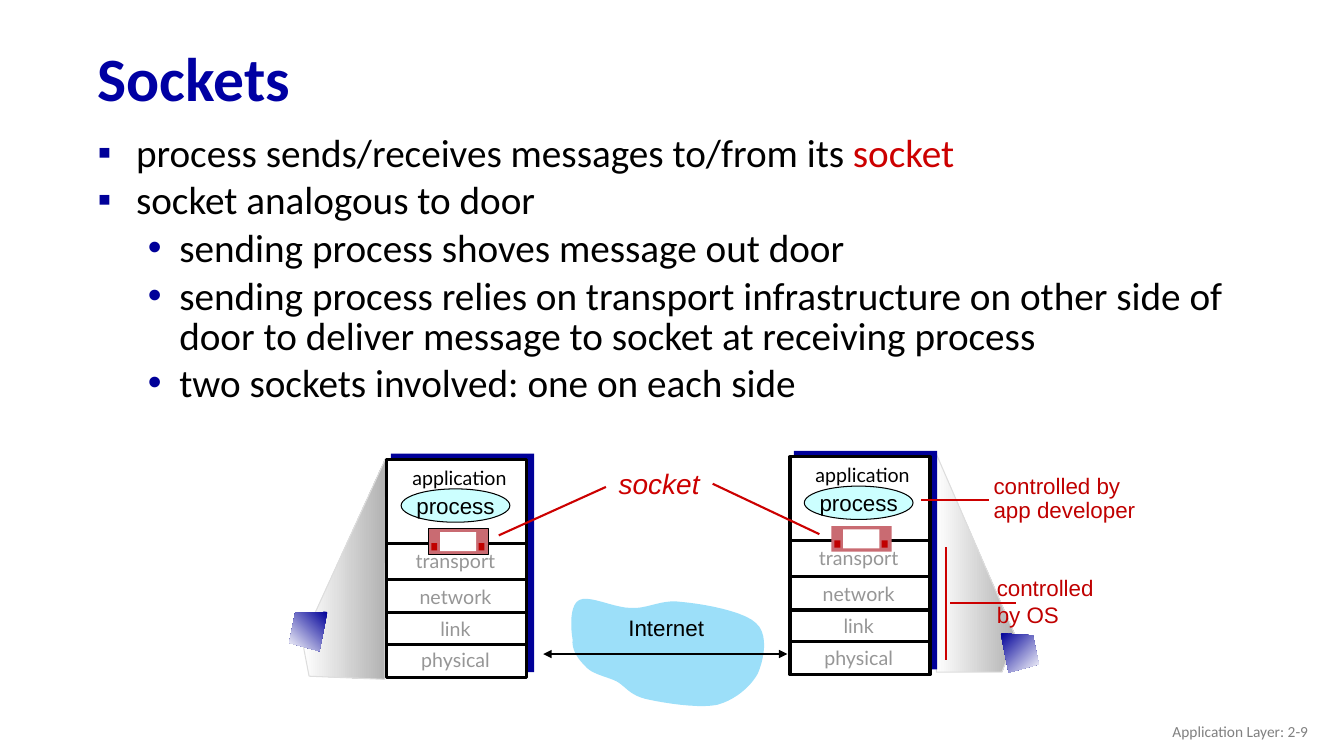
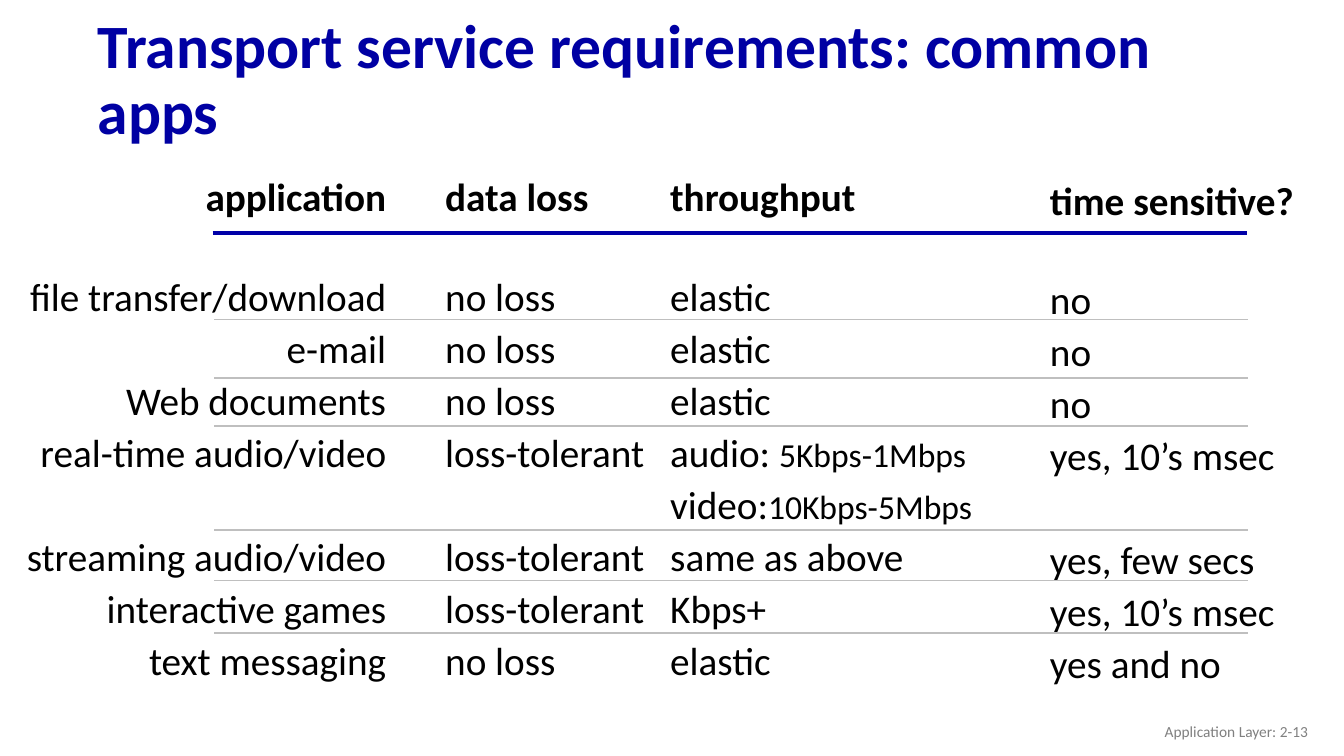
from dataclasses import dataclass

from lxml.etree import SubElement
from pptx import Presentation
from pptx.dml.color import RGBColor
from pptx.enum.shapes import MSO_CONNECTOR, MSO_SHAPE
from pptx.enum.text import MSO_ANCHOR, MSO_AUTO_SIZE, PP_ALIGN
from pptx.oxml.ns import qn
from pptx.util import Cm, Pt


@dataclass(frozen=True)
class Theme:
    title: str = "0000A3"
    navy: str = "000099"
    rule: str = "0000A8"
    text: str = "000000"
    white: str = "FFFFFF"
    red: str = "CC0000"
    dark_red: str = "C00000"
    door: str = "C96B72"
    process: str = "CCFFFF"
    cloud: str = "9CDFF9"
    muted: str = "969696"
    footer: str = "808080"
    grid: str = "BFBFBF"
    beam: str = "B2B2B2"
    beam_edge: str = "DDDDDD"
    body_font: str = "Calibri"
    label_font: str = "Arial"
    layer_font: str = "Lato"
    title_size: float = 44
    body_size: float = 28
    detail_size: float = 24
    socket_size: float = 20
    label_size: float = 16
    layer_size: float = 14
    footer_size: float = 11


THEME = Theme()

BULLETS = [
    (0, ["process sends/receives messages to/from its ", "socket"]),
    (0, ["socket analogous to door"]),
    (1, ["sending process shoves message out door"]),
    (1, ["sending process relies on transport infrastructure on other side of "
         "door to deliver message to socket at receiving process"]),
    (1, ["two sockets involved: one on each side"]),
]
BULLET_LEVELS = [("▪", 0.97, -0.97), ("•", 2.06, -0.79)]

# Each later triple holds two control points and an end point.
CLOUD = [
    (0.08, 1.12),
    (0.03, 0.84), (0, 0.25), (0.25, 0.13),
    (0.51, 0), (1.12, 0.33), (1.55, 0.33),
    (1.98, 0.36), (2.31, 0.1), (2.84, 0.18),
    (3.38, 0.23), (4.39, 0.41), (4.7, 0.71),
    (5.03, 0.99), (4.9, 1.63), (4.75, 1.98),
    (4.57, 2.31), (4.19, 2.64), (3.73, 2.77),
    (3.25, 2.87), (2.34, 2.72), (1.91, 2.62),
    (1.5, 2.51), (1.42, 2.31), (1.19, 2.18),
    (0.94, 2.06), (0.61, 2.01), (0.43, 1.83),
    (0.25, 1.65), (0.05, 1.42), (0.08, 1.12),
]

REQUIREMENTS = [
    ["application", "data loss", "throughput", "time sensitive?"],
    ["file transfer/download", "no loss", "elastic", "no"],
    ["e-mail", "no loss", "elastic", "no"],
    ["Web documents", "no loss", "elastic", "no"],
    ["real-time audio/video", "loss-tolerant",
     [("audio: ", "5Kbps-1Mbps"), ("video:", "10Kbps-5Mbps")], "yes, 10’s msec"],
    ["streaming audio/video", "loss-tolerant", "same as above", "yes, few secs"],
    ["interactive games", "loss-tolerant", "Kbps+", "yes, 10’s msec"],
    ["text messaging", "no loss", "elastic", "yes and no"],
]


def color(value):
    return RGBColor.from_string(value)


def style_run(run, size, font_name=THEME.body_font, rgb=THEME.text, bold=False, italic=False):
    font = run.font
    font.size, font.name, font.bold, font.italic = Pt(size), font_name, bold, italic
    font.color.rgb = color(rgb)


def style_frame(frame, *style, align=PP_ALIGN.LEFT, spacing=1.0, **emphasis):
    for paragraph in frame.paragraphs:
        paragraph.alignment, paragraph.line_spacing = align, spacing
        for run in paragraph.runs:
            style_run(run, *style, **emphasis)


def add_label(slide, box, text, *style, anchor=MSO_ANCHOR.TOP, **options):
    frame = slide.shapes.add_textbox(*map(Cm, box)).text_frame
    frame.word_wrap = True
    frame.vertical_anchor = anchor
    frame.text = text
    style_frame(frame, *style, **options)


def set_outline(shape, rgb=None, width=0.75):
    if rgb:
        shape.line.color.rgb = color(rgb)
        shape.line.width = Pt(width)
    else:
        shape.line.fill.background()


def add_block(slide, kind, box, fill, outline=None, width=0.75):
    shape = slide.shapes.add_shape(kind, *map(Cm, box))
    shape.shadow.inherit = False
    shape.fill.solid()
    shape.fill.fore_color.rgb = color(fill)
    set_outline(shape, outline, width)
    return shape


def add_outline_shape(slide, origin, points, outline=None):
    """Draw a closed polygon whose points are relative to origin."""
    left, top = origin
    vertices = [(Cm(left + x), Cm(top + y)) for x, y in points]
    builder = slide.shapes.build_freeform(*vertices[0], scale=1.0)
    builder.add_line_segments(vertices[1:], close=True)
    shape = builder.convert_to_shape()
    shape.shadow.inherit = False
    set_outline(shape, outline)
    return shape


def fill_gradient(shape, first, last, angle):
    shape.fill.gradient()
    shape.fill.gradient_angle = angle
    for stop, rgb in zip(shape.fill.gradient_stops, (first, last)):
        stop.color.rgb = color(rgb)


def add_line(slide, start, end, rgb, width, arrows=False):
    line = slide.shapes.add_connector(MSO_CONNECTOR.STRAIGHT, *map(Cm, (*start, *end)))
    line.line.color.rgb = color(rgb)
    line.line.width = Pt(width)
    properties = line._element.spPr
    if arrows:
        outline = properties.find(qn("a:ln"))
        for tag in ("a:headEnd", "a:tailEnd"):
            SubElement(outline, qn(tag), type="triangle")
    SubElement(properties, qn("a:effectLst"))


def add_titled_slide(presentation, title, number):
    slide = presentation.slides.add_slide(presentation.slide_layouts[5])
    placeholder = slide.shapes.title
    placeholder.left, placeholder.top = Cm(2.21), Cm(0.81)
    placeholder.width, placeholder.height = Cm(29.21), Cm(2.49)
    frame = placeholder.text_frame
    frame.text = title
    frame.word_wrap = True
    frame.auto_size = MSO_AUTO_SIZE.NONE
    frame.vertical_anchor = MSO_ANCHOR.MIDDLE
    style_frame(frame, THEME.title_size, THEME.body_font, THEME.title, spacing=0.9, bold=True)
    add_label(slide, (25.6, 17.91, 7.62, 1.02), f"Application Layer: {number}",
              THEME.footer_size, THEME.body_font, THEME.footer,
              align=PP_ALIGN.RIGHT, anchor=MSO_ANCHOR.MIDDLE)
    return slide


def set_bullet(paragraph, level):
    symbol, margin, indent = BULLET_LEVELS[level]
    properties = paragraph._p.get_or_add_pPr()
    properties.set("marL", str(Cm(margin)))
    properties.set("indent", str(Cm(indent)))
    bullet_color = SubElement(properties, qn("a:buClr"))
    SubElement(bullet_color, qn("a:srgbClr"), val=THEME.navy)
    SubElement(properties, qn("a:buFont"), typeface=THEME.label_font)
    SubElement(properties, qn("a:buChar"), char=symbol)


def add_bullets(slide, box):
    frame = slide.shapes.add_textbox(*map(Cm, box)).text_frame
    frame.word_wrap = True
    for index, (level, parts) in enumerate(BULLETS):
        paragraph = frame.add_paragraph() if index else frame.paragraphs[0]
        paragraph.level = level
        paragraph.line_spacing = 0.85
        paragraph.space_before = Pt(5.5)
        set_bullet(paragraph, level)
        for text, rgb in zip(parts, (THEME.text, THEME.red)):
            run = paragraph.add_run()
            run.text = text
            style_run(run, THEME.body_size, rgb=rgb)


def add_beam(slide, origin, beam_points, cube_points, cube_angle):
    """Draw the shaded wedge and the small computer that a host belongs to."""
    beam = add_outline_shape(slide, origin, beam_points, THEME.beam_edge)
    fill_gradient(beam, THEME.white, THEME.beam, 0)
    cube = add_outline_shape(slide, origin, cube_points)
    fill_gradient(cube, THEME.navy, THEME.white, cube_angle)


def add_door(slide, left, top, outline):
    add_block(slide, MSO_SHAPE.RECTANGLE, (left, top, 1.52, 0.64), THEME.door, outline)
    add_block(slide, MSO_SHAPE.RECTANGLE, (left + 0.3, top + 0.08, 0.91, 0.48), THEME.white)
    for knob in (0.08, 1.27):
        add_block(slide, MSO_SHAPE.RECTANGLE, (left + knob, top + 0.36, 0.15, 0.18),
                  THEME.dark_red)


def add_host(slide, origin, door_outline=None):
    """Draw a protocol stack with its process and socket."""
    left, top = origin
    add_block(slide, MSO_SHAPE.RECTANGLE, (left + 0.1, top - 0.15, 3.61, 5.51), THEME.navy)
    add_block(slide, MSO_SHAPE.RECTANGLE, (left, top, 3.53, 5.49), THEME.white, THEME.text, 2.25)
    for divider in (2.11, 3.02, 3.86, 4.66):
        add_line(slide, (left, top + divider), (left + 3.53, top + divider), THEME.text, 2.25)
    layers = [("application", 0, -0.03, THEME.text), ("transport", -0.1, 2.06, THEME.muted),
              ("network", -0.1, 2.97, THEME.muted), ("link", -0.1, 3.78, THEME.muted),
              ("physical", -0.1, 4.57, THEME.muted)]
    for name, x, y, rgb in layers:
        add_label(slide, (left + x, top + y, 3.66, 0.91), name, THEME.layer_size,
                  THEME.layer_font, rgb, align=PP_ALIGN.CENTER, spacing=1.1)
    process = add_block(slide, MSO_SHAPE.OVAL, (left + 0.36, top + 0.74, 2.74, 0.84),
                        THEME.process, THEME.text)
    frame = process.text_frame
    frame.text = "process"
    frame.word_wrap = False
    frame.vertical_anchor = MSO_ANCHOR.MIDDLE
    style_frame(frame, THEME.label_size, THEME.label_font, align=PP_ALIGN.CENTER)
    add_door(slide, left + 1.04, top + 1.75, door_outline)


def add_cloud(slide, left, top, steps=10):
    points = [CLOUD[0]]
    for index in range(0, len(CLOUD) - 1, 3):
        curve = CLOUD[index:index + 4]
        for step in range(1, steps + 1):
            t = step / steps
            weights = ((1 - t) ** 3, 3 * t * (1 - t) ** 2, 3 * t * t * (1 - t), t ** 3)
            points.append(tuple(sum(w * p[axis] for w, p in zip(weights, curve))
                                for axis in (0, 1)))
    cloud = add_outline_shape(slide, (left, top), points)
    cloud.fill.solid()
    cloud.fill.fore_color.rgb = color(THEME.cloud)
    add_label(slide, (left + 0.96, top + 0.36, 2.96, 0.94), "Internet",
              THEME.label_size, THEME.label_font, align=PP_ALIGN.CENTER)


def add_callouts(slide):
    callout = (THEME.label_size, THEME.label_font, THEME.dark_red)
    add_label(slide, (24.87, 14.35, 4.09, 2.29), "controlled\nby OS", *callout)
    add_label(slide, (24.79, 11.84, 4.09, 1.47), "controlled by\napp developer",
              *callout, spacing=0.9)
    add_label(slide, (15.34, 11.73, 3.5, 1.02), "socket", THEME.socket_size,
              THEME.label_font, THEME.red, spacing=0.9, italic=True)
    for start, end in [((24.92, 12.6), (23.22, 12.6)), ((23.85, 13.79), (23.85, 16.64)),
                       ((25.6, 15.19), (23.93, 15.19)), ((12.57, 13.49), (15.27, 12.27)),
                       ((20.65, 13.46), (17.96, 12.19))]:
        add_line(slide, start, end, THEME.red, 1.5)


def build_sockets_slide(presentation):
    slide = add_titled_slide(presentation, "Sockets", "2-9")
    add_bullets(slide, (2.21, 3.28, 30.45, 6.48))
    sender, receiver = (9.75, 11.58), (19.91, 11.51)
    add_beam(slide, sender, [(-2.13, 4.57), (-0.03, -0.03), (-0.05, 5.54), (-1.96, 5.46)],
             [(-1.5, 3.84), (-2.31, 3.86), (-2.46, 4.62), (-1.7, 4.83)], 225)
    add_beam(slide, receiver, [(5.69, 4.54), (3.66, -0.13), (3.69, 5.43), (5.34, 5.43)],
             [(5.31, 4.45), (6.12, 4.5), (6.27, 5.23), (5.51, 5.44)], 315)
    add_cloud(slide, 14.35, 14.99)
    add_line(slide, (13.69, 16.48), (19.84, 16.48), THEME.text, 0.75, arrows=True)
    add_host(slide, sender, THEME.text)
    add_host(slide, receiver)
    add_callouts(slide)


def fill_cell(cell, content, bold):
    lines = [(content,)] if isinstance(content, str) else content
    frame = cell.text_frame
    for index, parts in enumerate(lines):
        paragraph = frame.add_paragraph() if index else frame.paragraphs[0]
        paragraph.space_before = Pt(2.9 if index else 0)
        for text, size in zip(parts, (THEME.body_size, THEME.detail_size)):
            run = paragraph.add_run()
            run.text = text
            style_run(run, size, bold=bold)


def add_requirements_table(slide, left, top):
    widths, heights = (10.64, 5.67, 9.57, 7.6), [2.51] + [1.31] * 3 + [2.62] + [1.31] * 3
    table = slide.shapes.add_table(len(heights), len(widths), Cm(left), Cm(top),
                                   Cm(sum(widths)), Cm(sum(heights))).table
    table.first_row = table.horz_banding = False
    for column, width in zip(table.columns, widths):
        column.width = Cm(width)
    for row_index, (row, height) in enumerate(zip(table.rows, heights)):
        row.height = Cm(height)
        for column_index, cell in enumerate(row.cells):
            cell.fill.background()
            cell.margin_left, cell.margin_right = Cm(0.25), Cm(0)
            cell.margin_top, cell.margin_bottom = Cm(0.09 if column_index == 3 else 0), Cm(0)
            fill_cell(cell, REQUIREMENTS[row_index][column_index], row_index == 0)
            if column_index == 0:
                cell.margin_right = Cm(1.24)
                cell.text_frame.paragraphs[0].alignment = PP_ALIGN.RIGHT


def build_requirements_slide(presentation):
    slide = add_titled_slide(presentation, "Transport service requirements: common apps", "2-13")
    add_requirements_table(slide, 0.33, 4.39)
    add_line(slide, (5.36, 5.87), (31.42, 5.87), THEME.rule, 2.5)
    for y in (8.05, 9.53, 10.74, 13.36, 14.63, 15.95):
        add_line(slide, (5.4, y), (31.45, y), THEME.grid, 1.25)


def main():
    presentation = Presentation()
    presentation.slide_width, presentation.slide_height = Cm(33.87), Cm(19.05)
    build_sockets_slide(presentation)
    build_requirements_slide(presentation)
    presentation.save("out.pptx")


if __name__ == "__main__":
    main()
